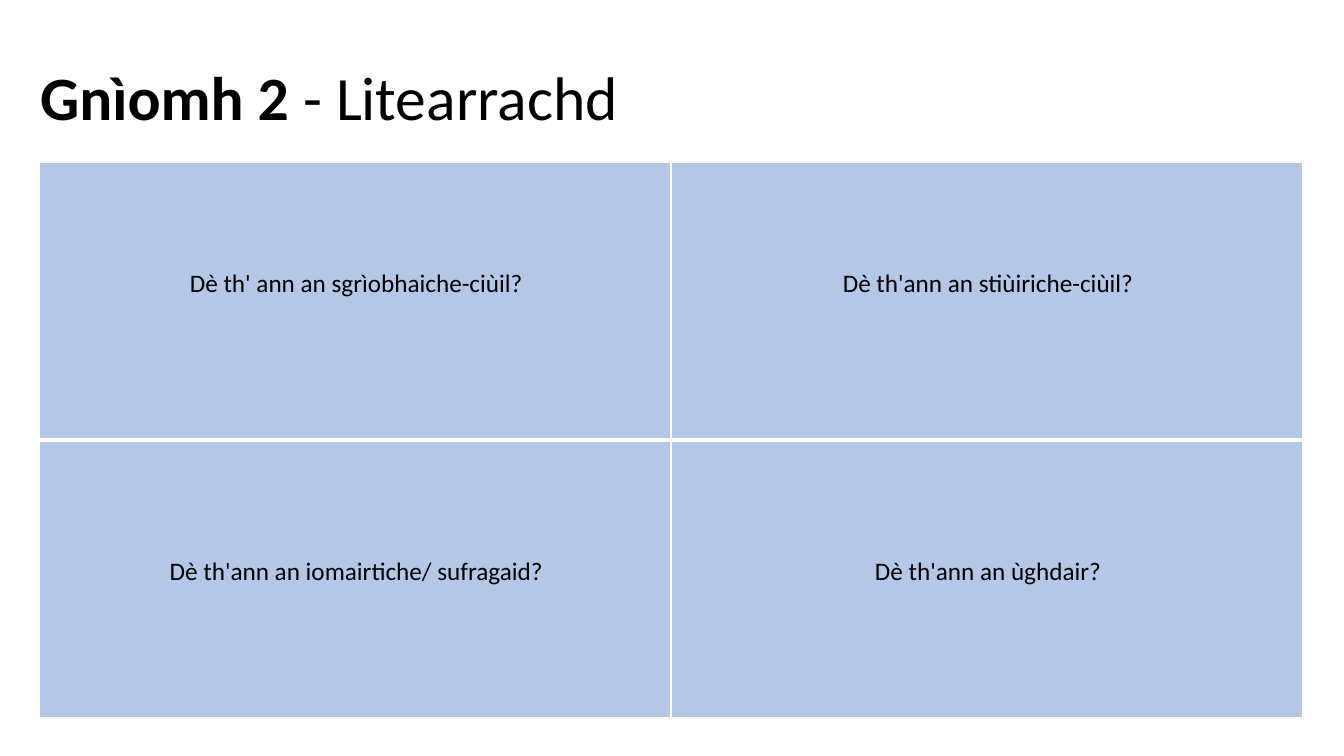
from lxml import etree
from pptx import Presentation
from pptx.dml.color import RGBColor
from pptx.enum import text
from pptx.oxml import ns
from pptx.util import Cm, Pt

HEADING = [("Gnìomh 2 ", True), ("- Litearrachd", False)]
QUESTIONS = [
    ["Dè th' ann an sgrìobhaiche-ciùil?", "Dè th'ann an stiùiriche-ciùil?"],
    ["Dè th'ann an iomairtiche/ sufragaid?", "Dè th'ann an ùghdair?"],
]
COLOURS = {"text": "000000", "panel": "B4C7E7", "border": "FFFFFF"}
FONT = "Calibri"
GRID_LEFT, GRID_TOP = 0.99, 4.09
COLUMN_WIDTH, ROW_HEIGHT = 15.92, 7.0
QUESTION_LEFT, QUESTION_TOPS = 1.02, [6.6, 13.87]
BORDER_WIDTH, DIVIDER_WIDTH = 1, 3


def style(run, size, bold=False):
    run.font.name = FONT
    run.font.size = Pt(size)
    run.font.bold = bold
    run.font.color.rgb = RGBColor.from_string(COLOURS["text"])


def add_border(cell, side, width):
    properties = cell._tc.get_or_add_tcPr()
    line = etree.SubElement(properties, ns.qn(f"a:ln{side}"), w=str(Pt(width)))
    fill = etree.SubElement(line, ns.qn("a:solidFill"))
    etree.SubElement(fill, ns.qn("a:srgbClr"), val=COLOURS["border"])


def add_heading(slide):
    heading = slide.shapes.title
    heading.left, heading.top = Cm(0.76), Cm(1.35)
    heading.width, heading.height = Cm(22.12), Cm(2.13)
    heading.text_frame.vertical_anchor = text.MSO_ANCHOR.MIDDLE
    paragraph = heading.text_frame.paragraphs[0]
    paragraph.alignment = text.PP_ALIGN.LEFT
    for words, bold in HEADING:
        run = paragraph.add_run()
        run.text = words
        style(run, 44, bold)


def add_grid(slide):
    row_count, column_count = len(QUESTIONS), len(QUESTIONS[0])
    grid = slide.shapes.add_table(
        row_count, column_count, Cm(GRID_LEFT), Cm(GRID_TOP),
        Cm(column_count * COLUMN_WIDTH), Cm(row_count * ROW_HEIGHT)).table
    for r in range(row_count):
        for c in range(column_count):
            panel = grid.cell(r, c)
            top = DIVIDER_WIDTH if r else BORDER_WIDTH
            bottom = BORDER_WIDTH if r == row_count - 1 else DIVIDER_WIDTH
            for side, width in zip("LRTB", (BORDER_WIDTH, BORDER_WIDTH, top, bottom)):
                add_border(panel, side, width)
            panel.fill.solid()
            panel.fill.fore_color.rgb = RGBColor.from_string(COLOURS["panel"])


def add_questions(slide):
    for top, row in zip(QUESTION_TOPS, QUESTIONS):
        for c, words in enumerate(row):
            question = slide.shapes.add_textbox(
                Cm(QUESTION_LEFT + c * COLUMN_WIDTH), Cm(top), Cm(COLUMN_WIDTH), Cm(1.03))
            frame = question.text_frame
            frame.word_wrap = True
            frame.text = words
            paragraph = frame.paragraphs[0]
            paragraph.alignment = text.PP_ALIGN.CENTER
            style(paragraph.runs[0], 18)


def main():
    deck = Presentation()
    deck.slide_width, deck.slide_height = Cm(33.87), Cm(19.05)
    slide = deck.slides.add_slide(deck.slide_layouts[5])
    add_heading(slide)
    add_grid(slide)
    add_questions(slide)
    deck.save("out.pptx")


if __name__ == "__main__":
    main()
